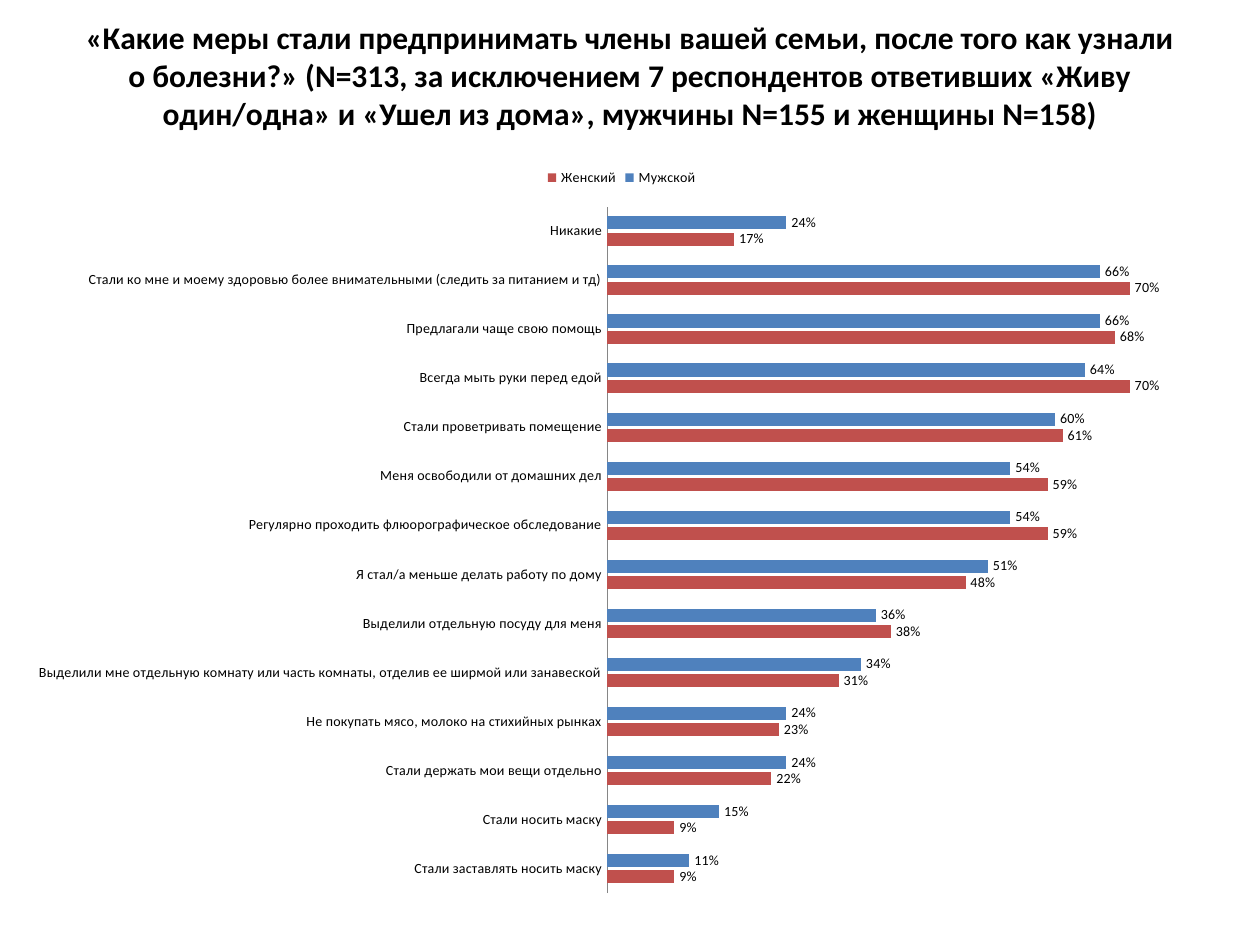
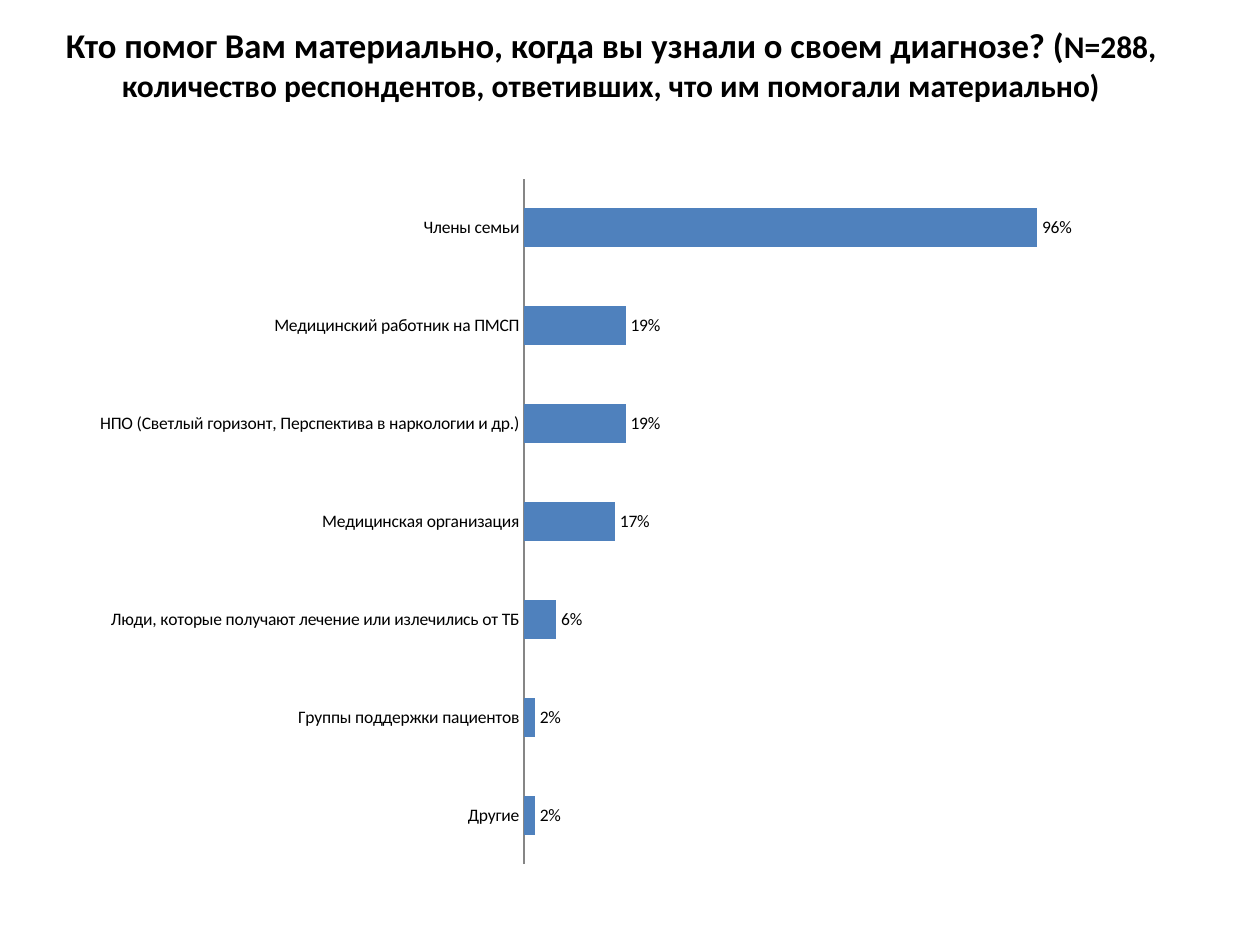
"""Build two survey slides, each with a title and a bar chart."""
from lxml.etree import SubElement as Sub
from pptx import Presentation
from pptx.chart.data import CategoryChartData as Data
from pptx.dml.color import RGBColor as RGB
from pptx.enum.chart import XL_CHART_TYPE as Kind, XL_LABEL_POSITION as Spot
from pptx.enum.chart import XL_LEGEND_POSITION as Side, XL_TICK_MARK as Tick
from pptx.enum.chart import XL_TICK_LABEL_POSITION as Place
from pptx.enum.text import MSO_ANCHOR as Anchor, MSO_AUTO_SIZE as Fit, PP_ALIGN as Align
from pptx.oxml.ns import qn
from pptx.util import Inches, Pt

FONT = "Calibri"
HEX = {"text": "000000", "male": "4F81BD", "female": "C0504D", "axis": "868686"}

MEASURES = [
    ("Никакие", 0.24, 0.17),
    ("Стали ко мне и моему здоровью более внимательными (следить за питанием и тд)", 0.66, 0.70),
    ("Предлагали чаще свою помощь", 0.66, 0.68),
    ("Всегда мыть руки перед едой", 0.64, 0.70),
    ("Стали проветривать помещение", 0.60, 0.61),
    ("Меня освободили от домашних дел", 0.54, 0.59),
    ("Регулярно проходить флюорографическое обследование", 0.54, 0.59),
    ("Я стал/а меньше делать работу по дому", 0.51, 0.48),
    ("Выделили отдельную посуду для меня", 0.36, 0.38),
    ("Выделили мне отдельную комнату или часть комнаты, отделив ее ширмой или занавеской", 0.34, 0.31),
    ("Не покупать мясо, молоко на стихийных рынках", 0.24, 0.23),
    ("Стали держать мои вещи отдельно", 0.24, 0.22),
    ("Стали носить маску", 0.15, 0.09),
    ("Стали заставлять носить маску", 0.11, 0.09),
]
HELPERS = [
    ("Члены семьи", 0.96),
    ("Медицинский работник на ПМСП", 0.19),
    ("НПО (Светлый горизонт, Перспектива в наркологии и др.)", 0.19),
    ("Медицинская организация", 0.17),
    ("Люди, которые получают лечение или излечились от ТБ", 0.06),
    ("Группы поддержки пациентов", 0.02),
    ("Другие", 0.02),
]
SLIDES = [
    {
        "title": [("«Какие меры стали предпринимать члены вашей семьи, после того как узнали "
                   "о болезни?» (N=313, за исключением 7 респондентов ответивших «Живу "
                   "один/одна» и «Ушел из дома», мужчины N=155 и женщины N=158)", 18)],
        "head": (0.5, 0.3, 9, 1.25),
        "box": (0.12, 1.23, 9.63, 5.98),
        "plot": (4.82, 1.64, 4.74, 5.45),
        "rows": MEASURES,
        "names": ["Мужской", "Женский"],
        "size": 8, "top": 0.8, "form": "###0%",
    },
    {
        "title": [("Кто помог Вам материально, когда вы узнали о своем диагнозе? (", 19.8),
                  ("N=288, количество респондентов, ответивших, что им помогали материально)", 18)],
        "head": (0.35, 0.21, 9, 1.25),
        "box": (0.43, 1.31, 9, 5.67),
        "plot": (4.16, 1.42, 5.09, 5.44),
        "rows": HELPERS,
        "names": ["Series 1"],
        "size": 10, "top": 1.2, "form": "0%",
    },
]


def put(item, **values):
    for name, value in values.items():
        setattr(item, name, value)


def style(font, size, **more):
    put(font, name=FONT, size=Pt(size), **more)
    font.color.rgb = RGB.from_string(HEX["text"])


def add_title(slide, page):
    shape = slide.shapes.title
    put(shape, **dict(zip(("left", "top", "width", "height"), map(Inches, page["head"]))))
    frame = shape.text_frame
    put(frame, word_wrap=True, auto_size=Fit.NONE, vertical_anchor=Anchor.MIDDLE,
        margin_bottom=Inches(0.71))
    para = frame.paragraphs[0]
    para.alignment = Align.CENTER
    for text, size in page["title"]:
        run = para.add_run()
        run.text = text
        style(run.font, size, bold=True)


def set_plot(chart, box, plot):
    area = chart.element.find(".//" + qn("c:plotArea"))
    for old in area.findall(qn("c:layout")):
        area.remove(old)
    layout = Sub(area, qn("c:layout"))
    area.insert(0, layout)
    manual = Sub(layout, qn("c:manualLayout"))
    left, top, width, height = box
    x, y, wide, high = plot
    parts = {"layoutTarget": "inner", "xMode": "edge", "yMode": "edge",
             "x": (x - left) / width, "y": (y - top) / height,
             "w": wide / width, "h": high / height}
    for tag, value in parts.items():
        Sub(manual, qn("c:" + tag)).set("val", str(value))


def add_bars(slide, page):
    cats, *sets = zip(*page["rows"])
    data = Data(number_format=page["form"])
    data.categories = cats
    for name, values in zip(page["names"], sets):
        data.add_series(name, values)
    chart = slide.shapes.add_chart(Kind.BAR_CLUSTERED, *map(Inches, page["box"]), data).chart
    put(chart, has_title=False, has_legend=len(sets) > 1)
    style(chart.font, page["size"])
    if chart.has_legend:
        put(chart.legend, position=Side.TOP, include_in_layout=False)
    put(chart.category_axis, reverse_order=True, major_tick_mark=Tick.NONE,
        minor_tick_mark=Tick.NONE, tick_label_position=Place.NEXT_TO_AXIS,
        has_major_gridlines=False)
    line = chart.category_axis.format.line
    line.width = Pt(0.75)
    line.color.rgb = RGB.from_string(HEX["axis"])
    put(chart.value_axis, visible=False, has_major_gridlines=False,
        major_tick_mark=Tick.NONE, minimum_scale=0, maximum_scale=page["top"])
    bars = chart.plots[0]
    put(bars, gap_width=150, overlap=-25, vary_by_categories=False)
    for series, tone in zip(bars.series, ("male", "female")):
        series.format.fill.solid()
        series.format.fill.fore_color.rgb = RGB.from_string(HEX[tone])
        labels = series.data_labels
        put(labels, show_value=True, number_format=page["form"],
            number_format_is_linked=False, position=Spot.OUTSIDE_END)
        style(labels.font, page["size"])
    set_plot(chart, page["box"], page["plot"])


def main():
    deck = Presentation()
    put(deck, slide_width=Inches(10), slide_height=Inches(7.5))
    for page in SLIDES:
        slide = deck.slides.add_slide(deck.slide_layouts[5])
        add_title(slide, page)
        add_bars(slide, page)
    deck.save("out.pptx")


if __name__ == "__main__":
    main()
